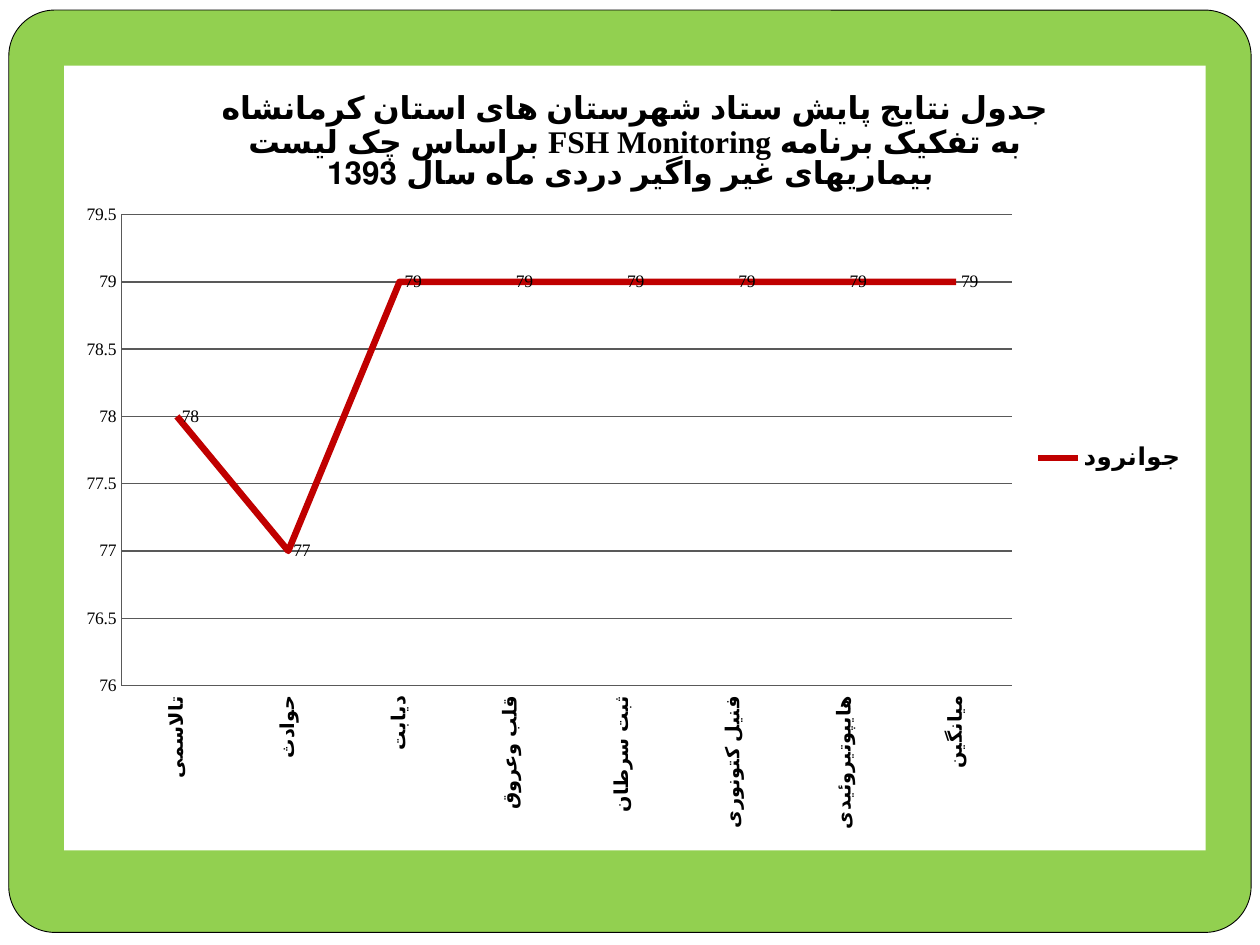
from lxml.etree import SubElement
from pptx import Presentation
from pptx.chart.data import CategoryChartData
from pptx.dml.color import RGBColor
from pptx.enum.chart import XL_CHART_TYPE, XL_LABEL_POSITION, XL_LEGEND_POSITION, XL_TICK_MARK
from pptx.enum.shapes import MSO_SHAPE
from pptx.oxml import parse_xml
from pptx.oxml.ns import nsdecls, qn
from pptx.util import Inches, Pt

COLOURS = {"green": "92D050", "white": "FFFFFF", "black": "000000",
           "red": "C00000", "grid": "595959"}
LATIN, PERSIAN = "Times New Roman", "Arial"
WIDTH, HEIGHT = 10, 7.5

TITLE_RUNS = [
    ("جدول نتایج پایش ستاد شهرستان های استان کرمانشاه براساس چک لیست "
     "FSH Monitoring به تفکیک برنامه ", LATIN),
    ("بیماریهای غیر واگیر دردی ماه سال 1393 ", PERSIAN),
]
SERIES = "جوانرود "
SCORES = {
    "تالاسمی ": 78, "حوادث ": 77, "دیابت ": 79, "قلب وعروق ": 79,
    "ثبت سرطان ": 79, "فنیل کتونوری ": 79, "هایپوتیروئیدی ": 79, "میانگین ": 79,
}


def colour(name):
    return RGBColor.from_string(COLOURS[name])


def set_font(font, size, bold=False, name=LATIN):
    font.size, font.bold, font.name = Pt(size), bold, name
    font.color.rgb = colour("black")


def set_line(line, name, width):
    line.color.rgb = colour(name)
    line.width = Pt(width)


def add_panel(page, box, kind, fill):
    panel = page.shapes.add_shape(kind, *(Inches(length) for length in box))
    panel.shadow.inherit = False
    panel.fill.solid()
    panel.fill.fore_color.rgb = colour(fill)
    panel.line.fill.background()
    return panel


def add_frame(page, box):
    page.background.fill.solid()
    page.background.fill.fore_color.rgb = colour("green")
    add_panel(page, (0, 0, WIDTH, HEIGHT), MSO_SHAPE.RECTANGLE, "white")
    frame = add_panel(page, box, MSO_SHAPE.ROUNDED_RECTANGLE, "green")
    frame.adjustments[0] = 0.05
    set_line(frame.line, "black", 0.5)


def fill_title(chart):
    chart.has_title = True
    chart.chart_title.include_in_layout = False
    para = chart.chart_title.text_frame.paragraphs[0]
    para._p.get_or_add_pPr().set("rtl", "1")
    for text, font_name in TITLE_RUNS:
        span = para.add_run()
        span.text = text
        set_font(span.font, 18, True, font_name)


def format_axes(chart):
    categories, values = chart.category_axis, chart.value_axis
    for axis in (categories, values):
        axis.major_tick_mark = axis.minor_tick_mark = XL_TICK_MARK.NONE
        set_line(axis.format.line, "grid", 0.75)
    set_font(categories.tick_labels.font, 11, True)
    categories._element.txPr.find(qn("a:bodyPr")).set("rot", "-5400000")
    set_font(values.tick_labels.font, 10)
    values.minimum_scale, values.maximum_scale, values.major_unit = 76, 79.5, 0.5
    values.has_major_gridlines = True
    set_line(values.major_gridlines.format.line, "grid", 0.75)


def format_series(chart):
    plot = chart.plots[0]
    plot.vary_by_categories = False
    scores = plot.series[0]
    scores.smooth = False
    set_line(scores.format.line, "red", 3.75)
    labels = scores.data_labels
    labels.show_value = True
    labels.position = XL_LABEL_POSITION.RIGHT
    set_font(labels.font, 10)


def place_plot(chart, x, y, w, h):
    """Fix the inner plot area, in shares of the chart's size."""
    area = chart._chartSpace.chart.plotArea
    for old in area.findall(qn("c:layout")):
        area.remove(old)
    layout = parse_xml(f"<c:layout {nsdecls('c')}/>")
    manual = SubElement(layout, qn("c:manualLayout"))
    settings = {"layoutTarget": "inner", "xMode": "edge", "yMode": "edge",
                "x": x, "y": y, "w": w, "h": h}
    for tag, value in settings.items():
        SubElement(manual, qn(f"c:{tag}")).set("val", str(value))
    area.insert(0, layout)


def fill_chart_background(chart):
    properties = parse_xml(
        f"<c:spPr {nsdecls('c', 'a')}><a:solidFill><a:srgbClr val=\"{COLOURS['white']}\"/>"
        "</a:solidFill><a:ln><a:noFill/></a:ln></c:spPr>")
    chart._chartSpace.chart.addnext(properties)


def add_score_chart(page, box):
    data = CategoryChartData(number_format="General")
    data.categories = list(SCORES)
    data.add_series(SERIES, list(SCORES.values()))
    chart = page.shapes.add_chart(
        XL_CHART_TYPE.LINE, *(Inches(length) for length in box), data).chart
    set_font(chart.font, 10)
    fill_chart_background(chart)
    fill_title(chart)
    format_axes(chart)
    format_series(chart)
    place_plot(chart, 0.05, 0.19, 0.78, 0.6)
    chart.has_legend = True
    chart.legend.position = XL_LEGEND_POSITION.RIGHT
    chart.legend.include_in_layout = False
    set_font(chart.legend.font, 14, True, PERSIAN)


def main():
    deck = Presentation()
    deck.slide_width, deck.slide_height = Inches(WIDTH), Inches(HEIGHT)
    page = deck.slides.add_slide(deck.slide_layouts[6])
    add_frame(page, (0.07, 0.08, 9.86, 7.32))
    add_score_chart(page, (0.51, 0.52, 9.06, 6.23))
    deck.save("out.pptx")


if __name__ == "__main__":
    main()
